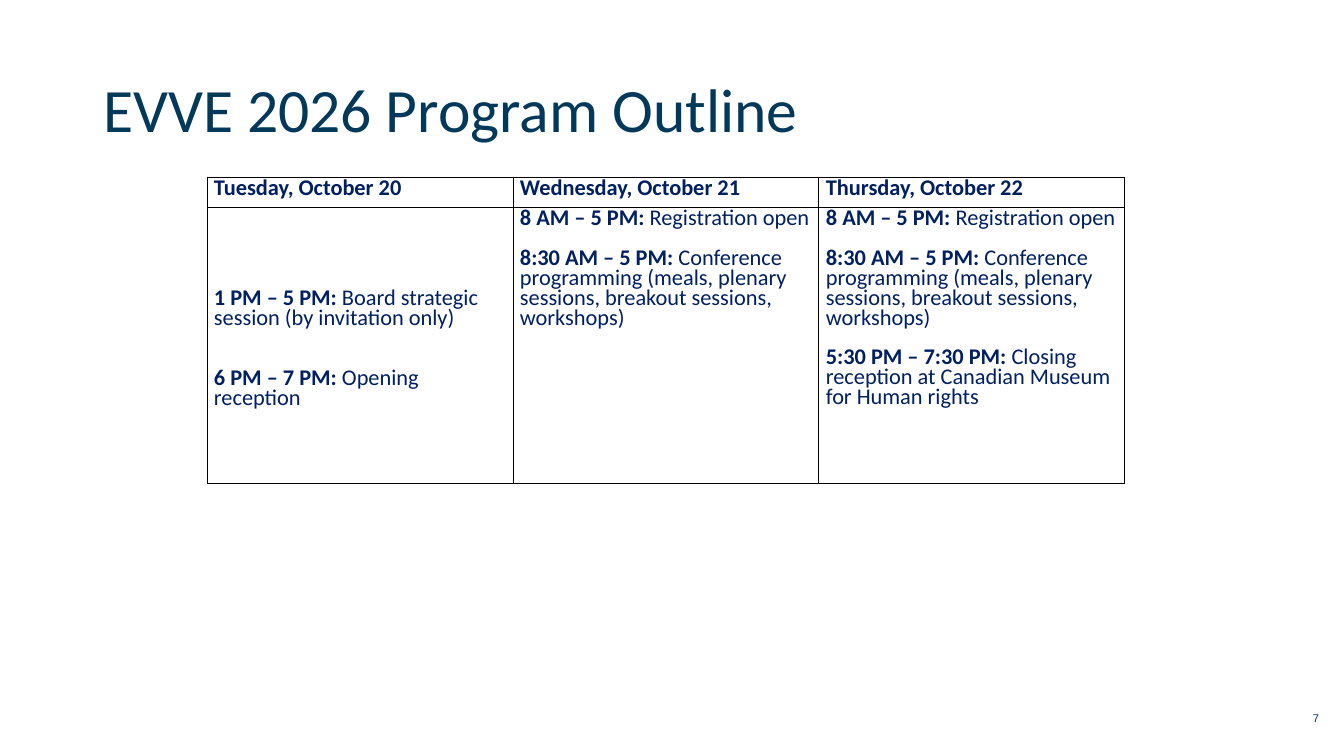
from lxml.etree import SubElement
from pptx import Presentation
from pptx.dml.color import RGBColor
from pptx.enum.text import MSO_ANCHOR, MSO_AUTO_SIZE, PP_ALIGN
from pptx.oxml.ns import qn
from pptx.util import Emu, Pt

EMU_PER_PX = 914400 / 100.8
COLORS = {"title": "023859", "table": "002060", "border": "000000"}
LINE_PT = 14.2
LINE_PX = 20

DAYS = ["Tuesday, October 20", "Wednesday, October 21", "Thursday, October 22"]
REGISTRATION = ("8 AM – 5 PM:", "Registration open")
PROGRAMMING = (
    "8:30 AM – 5 PM:",
    "Conference programming (meals, plenary sessions, breakout sessions, workshops)",
)
# Per day: empty lines above the first event, empty lines between events, events
SCHEDULES = [
    (4, 2, [("1 PM – 5 PM:", "Board strategic session (by invitation only)"),
            ("6 PM – 7 PM:", "Opening reception")]),
    (0, 1, [REGISTRATION, PROGRAMMING]),
    (0, 1, [REGISTRATION, PROGRAMMING,
            ("5:30 PM – 7:30 PM:",
             "Closing reception at Canadian Museum for Human rights")]),
]


def px(length):
    return Emu(round(length * EMU_PER_PX))


def add_span(para, text, size=16, color="table", font="Calibri", bold=False):
    span = para.add_run()
    span.text = text
    span.font.size = Pt(size)
    span.font.name = font
    span.font.bold = bold
    span.font.color.rgb = RGBColor.from_string(COLORS[color])


def set_title(page, text, left, top, width, height):
    title = page.shapes.title
    title.left, title.top = px(left), px(top)
    title.width, title.height = px(width), px(height)
    frame = title.text_frame
    frame.auto_size = MSO_AUTO_SIZE.NONE
    frame.vertical_anchor = MSO_ANCHOR.MIDDLE
    para = frame.paragraphs[0]
    para.alignment = PP_ALIGN.LEFT
    para.line_spacing = 0.9
    add_span(para, text, size=44, color="title")


def add_page_number(page, text, left, top, width, height):
    box = page.shapes.add_textbox(px(left), px(top), px(width), px(height))
    box.text_frame.word_wrap = True
    para = box.text_frame.paragraphs[0]
    para.alignment = PP_ALIGN.RIGHT
    add_span(para, text, size=8, color="title", font="Arial")


def format_cell(cell, lines_above=0):
    """Give the cell its borders, no fill, and insets with empty lines on top."""
    properties = cell._tc.get_or_add_tcPr()
    for side in ("lnL", "lnR", "lnT", "lnB"):
        line = SubElement(properties, qn(f"a:{side}"), w=str(Pt(0.75)))
        fill = SubElement(line, qn("a:solidFill"))
        SubElement(fill, qn("a:srgbClr"), val=COLORS["border"])
    cell.fill.background()
    cell.margin_left = cell.margin_right = px(7)
    cell.margin_top = px(5 + lines_above * LINE_PX)
    cell.margin_bottom = px(5)


def add_program_table(page, left, top, column_width, row_heights):
    frame = page.shapes.add_table(
        len(row_heights), len(DAYS), px(left), px(top),
        px(column_width * len(DAYS)), px(sum(row_heights)))
    table = frame.table
    table.first_row = table.horz_banding = False
    for column in table.columns:
        column.width = px(column_width)
    for row, height in zip(table.rows, row_heights):
        row.height = px(height)

    for column, (day, schedule) in enumerate(zip(DAYS, SCHEDULES)):
        heading = table.cell(0, column)
        format_cell(heading)
        para = heading.text_frame.paragraphs[0]
        para.line_spacing = Pt(LINE_PT)
        add_span(para, day, bold=True)

        lines_above, lines_between, events = schedule
        cell = table.cell(1, column)
        format_cell(cell, lines_above)
        for index, (hours, event) in enumerate(events):
            if index == 0:
                para = cell.text_frame.paragraphs[0]
            else:
                para = cell.text_frame.add_paragraph()
                para.space_before = Pt(lines_between * LINE_PT)
            para.line_spacing = Pt(LINE_PT)
            add_span(para, hours, bold=True)
            add_span(para, f" {event}")


def main():
    deck = Presentation()
    deck.slide_width, deck.slide_height = px(1344), px(756)
    page = deck.slides.add_slide(deck.slide_layouts[5])
    add_page_number(page, "7", 1281, 706, 48, 24)
    set_title(page, "EVVE 2026 Program Outline", 93, 40, 1159, 146)
    add_program_table(page, 207, 177, 306, [30, 277])
    deck.save("out.pptx")


if __name__ == "__main__":
    main()
